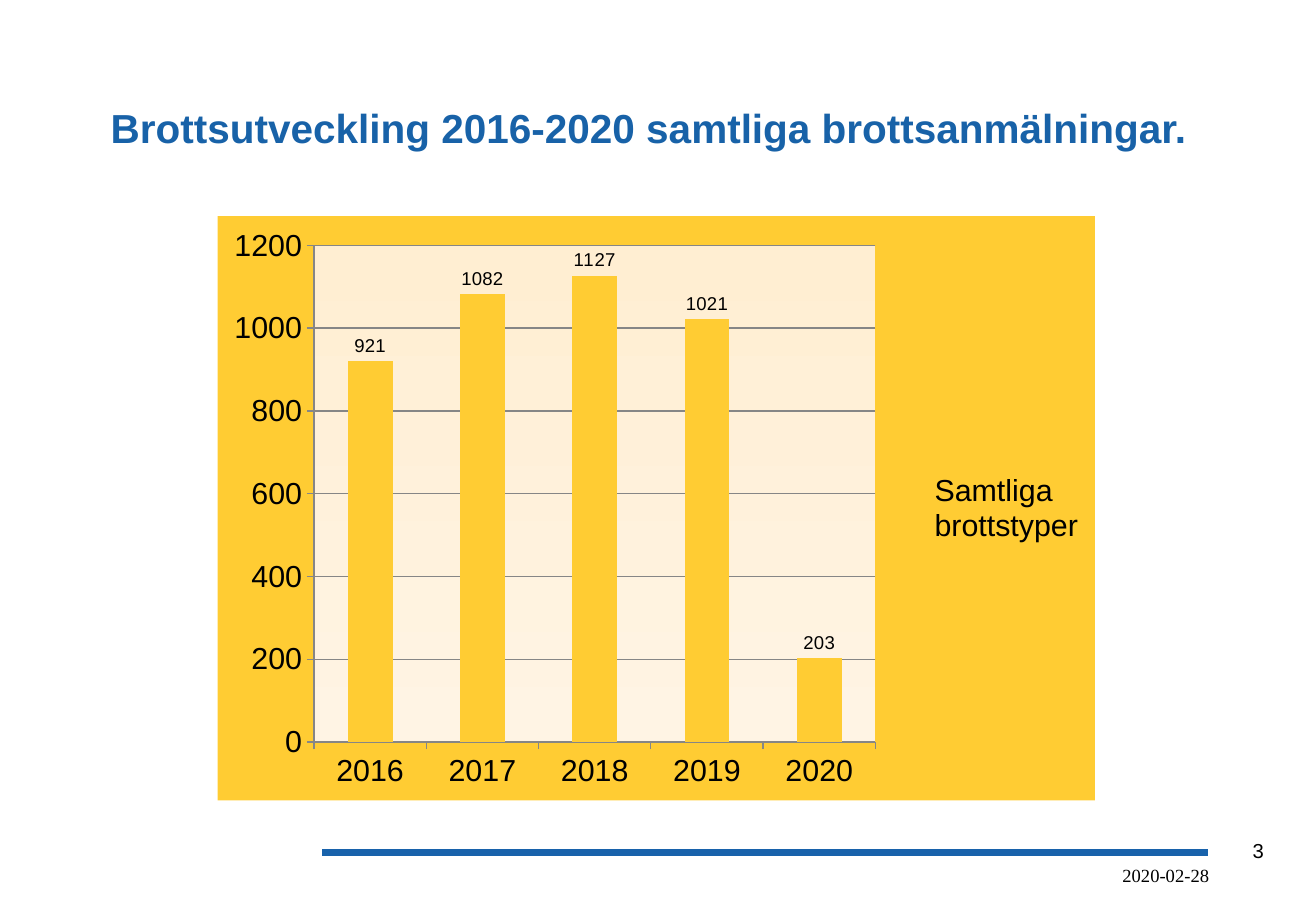
from dataclasses import dataclass

from lxml.etree import SubElement
from pptx import Presentation
from pptx.chart.data import CategoryChartData
from pptx.dml.color import RGBColor
from pptx.enum.chart import XL_CHART_TYPE, XL_LABEL_POSITION, XL_LEGEND_POSITION, XL_TICK_MARK
from pptx.enum.shapes import MSO_CONNECTOR
from pptx.enum.text import MSO_ANCHOR, PP_ALIGN
from pptx.oxml import parse_xml
from pptx.oxml.ns import nsdecls, qn
from pptx.util import Inches, Pt


@dataclass(frozen=True)
class Theme:
    title_color: str = "1862A8"
    rule_color: str = "1862AB"
    text_color: str = "000000"
    yellow: str = "FFCC33"
    plot_top: str = "FFEED2"
    plot_bottom: str = "FFF4E4"
    grid: str = "868686"
    sans: str = "Arial"
    serif: str = "Times New Roman"
    title_size: int = 24
    chart_size: int = 18
    label_size: int = 11
    number_size: int = 12
    date_size: int = 11


THEME = Theme()
COUNTS = {"2016": 921, "2017": 1082, "2018": 1127, "2019": 1021, "2020": 203}


def style_font(font, size, color=THEME.text_color, name=THEME.sans, bold=False):
    font.size, font.name, font.bold = Pt(size), name, bold
    font.color.rgb = RGBColor.from_string(color)


def add_text(slide, box, text, size, inset=0.1, align=PP_ALIGN.LEFT, **font_style):
    frame = slide.shapes.add_textbox(*map(Inches, box)).text_frame
    frame.word_wrap = True
    frame.vertical_anchor = MSO_ANCHOR.MIDDLE
    frame.margin_left = Inches(inset)
    paragraph = frame.paragraphs[0]
    paragraph.text = text
    paragraph.alignment = align
    style_font(paragraph.font, size, **font_style)


def manual_layout(left, top, width, height, inner=False):
    """Return a chart layout element; lengths are shares of the chart box."""
    target = '<c:layoutTarget val="inner"/>' if inner else ""
    return parse_xml(
        f'<c:layout {nsdecls("c")}><c:manualLayout>{target}'
        '<c:xMode val="edge"/><c:yMode val="edge"/>'
        f'<c:x val="{left}"/><c:y val="{top}"/><c:w val="{width}"/><c:h val="{height}"/>'
        "</c:manualLayout></c:layout>")


def shape_properties(fill):
    return parse_xml(f'<c:spPr {nsdecls("c", "a")}>{fill}<a:ln><a:noFill/></a:ln></c:spPr>')


def solid_color(color):
    return f'<a:srgbClr val="{color}"/>'


def style_axes(chart):
    chart.value_axis.minimum_scale = 0
    chart.value_axis.maximum_scale = 1200
    chart.value_axis.major_unit = 200
    chart.value_axis.has_major_gridlines = True
    lines = [chart.value_axis.major_gridlines.format.line]
    for axis in (chart.category_axis, chart.value_axis):
        axis.major_tick_mark = XL_TICK_MARK.OUTSIDE
        axis.minor_tick_mark = XL_TICK_MARK.NONE
        lines.append(axis.format.line)
    for line in lines:
        line.width = Pt(0.75)
        line.color.rgb = RGBColor.from_string(THEME.grid)


def style_backgrounds(chart):
    space = chart.element if hasattr(chart, "element") else chart._chartSpace
    space.find(qn("c:chart")).addnext(
        shape_properties(f"<a:solidFill>{solid_color(THEME.yellow)}</a:solidFill>"))
    plot_area = space.find(".//" + qn("c:plotArea"))
    for layout in plot_area.findall(qn("c:layout")):
        plot_area.remove(layout)
    plot_area.insert(0, manual_layout(0.11, 0.05, 0.64, 0.85, inner=True))
    plot_area.append(shape_properties(
        f'<a:gradFill><a:gsLst><a:gs pos="0">{solid_color(THEME.plot_top)}</a:gs>'
        f'<a:gs pos="100000">{solid_color(THEME.plot_bottom)}</a:gs></a:gsLst>'
        '<a:lin ang="5400000" scaled="0"/></a:gradFill>'))
    legend = space.find(".//" + qn("c:legend"))
    for layout in legend.findall(qn("c:layout")):
        legend.remove(layout)
    legend.find(qn("c:legendPos")).addnext(manual_layout(0.78, 0.44, 0.21, 0.12))


def add_crime_chart(slide, box):
    data = CategoryChartData()
    data.categories = list(COUNTS)
    data.add_series("Samtliga brottstyper", list(COUNTS.values()))
    chart = slide.shapes.add_chart(
        XL_CHART_TYPE.COLUMN_CLUSTERED, *map(Inches, box), data).chart
    style_font(chart.font, THEME.chart_size)
    chart.has_title = False
    chart.has_legend = True
    chart.legend.position = XL_LEGEND_POSITION.RIGHT
    chart.legend.include_in_layout = False
    plot = chart.plots[0]
    plot.gap_width = 150
    plot.vary_by_categories = False
    series = plot.series[0]
    series.format.fill.solid()
    series.format.fill.fore_color.rgb = RGBColor.from_string(THEME.yellow)
    labels = series.data_labels
    labels.show_value = True
    labels.position = XL_LABEL_POSITION.OUTSIDE_END
    style_font(labels.font, THEME.label_size)
    style_axes(chart)
    style_backgrounds(chart)


def add_footer(slide, left, top, width):
    """Draw the rule across the given width, with page number and date beside it."""
    right = left + width
    rule = slide.shapes.add_connector(
        MSO_CONNECTOR.STRAIGHT, Inches(left), Inches(top), Inches(right), Inches(top))
    rule.line.width = Pt(4.5)
    rule.line.color.rgb = RGBColor.from_string(THEME.rule_color)
    SubElement(rule._element.spPr, qn("a:effectLst"))
    add_text(slide, (right + 0.27, top - 0.17, 0.44, 0.3), "3", THEME.number_size)
    add_text(slide, (left + 0.73, top + 0.04, width - 0.62, 0.29), "2020-02-28",
             THEME.date_size, inset=0, align=PP_ALIGN.RIGHT, name=THEME.serif)


def main():
    presentation = Presentation()
    presentation.slide_width, presentation.slide_height = Inches(10.83), Inches(7.5)
    slide = presentation.slides.add_slide(presentation.slide_layouts[6])
    add_footer(slide, 2.65, 7.02, 7.29)
    add_text(slide, (0.83, 0.42, 9.11, 1.25),
             "Brottsutveckling 2016-2020 samtliga brottsanmälningar.",
             THEME.title_size, inset=0.08, color=THEME.title_color, bold=True)
    add_crime_chart(slide, (1.79, 1.78, 7.22, 4.81))
    presentation.save("out.pptx")


if __name__ == "__main__":
    main()
